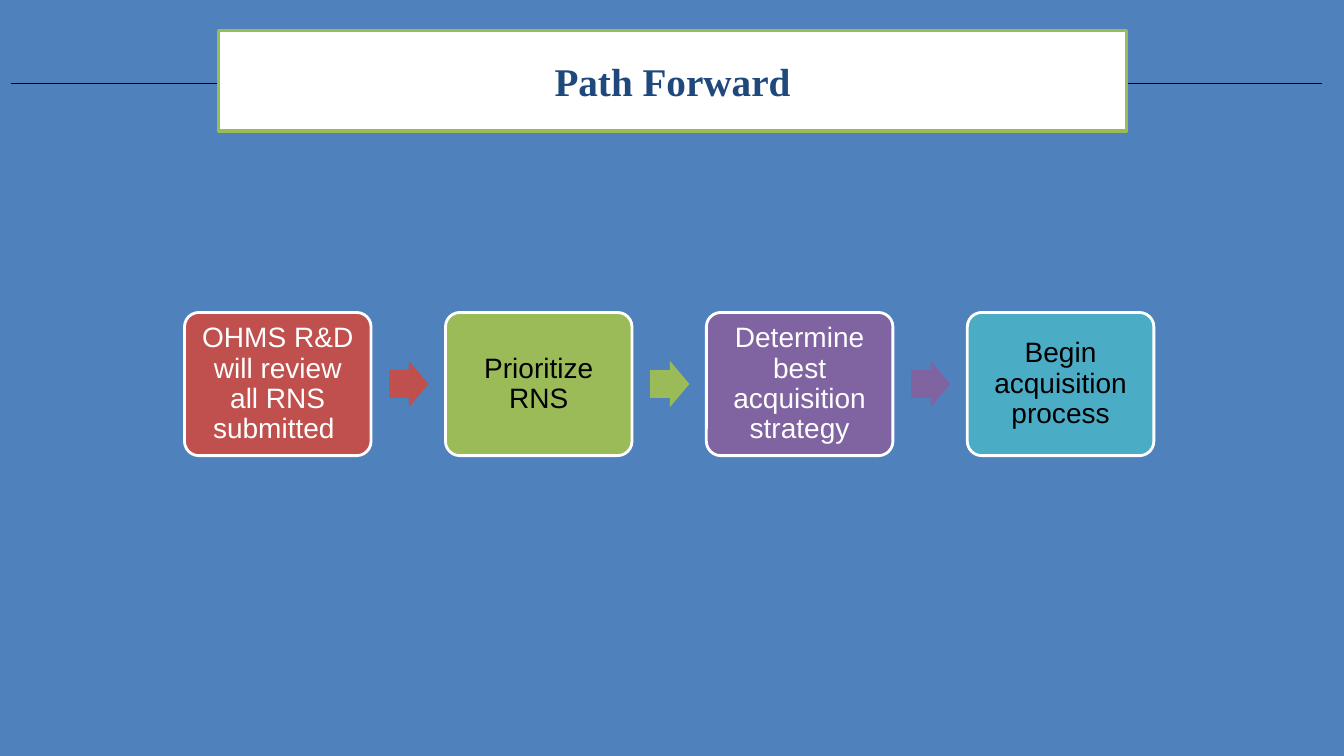
from dataclasses import dataclass

from lxml.etree import SubElement
from pptx import Presentation
from pptx.dml.color import RGBColor
from pptx.enum.shapes import MSO_CONNECTOR, MSO_SHAPE
from pptx.enum.text import MSO_ANCHOR, PP_ALIGN
from pptx.oxml.ns import qn
from pptx.shapes.autoshape import Shape
from pptx.slide import Slide
from pptx.util import Inches, Pt

COLOURS: dict[str, str] = {
    "background": "4F81BD",
    "white": "FFFFFF",
    "black": "000000",
    "navy": "1F497D",
    "red": "C0504D",
    "green": "9BBB59",
    "purple": "8064A2",
    "aqua": "4BACC6",
}

# Grid of the process row, in inches
SLIDE_WIDTH, SLIDE_HEIGHT = 13.33, 7.5
FIRST_COLUMN, COLUMN_STEP = 1.83, 2.588
STEP_WIDTH, STEP_HEIGHT = 1.85, 1.42
ROW_MIDDLE = 3.81
ARROW_OFFSET, ARROW_WIDTH, ARROW_HEIGHT = 2.03, 0.39, 0.46


@dataclass(frozen=True)
class Box:
    left: float
    top: float
    width: float
    height: float


@dataclass(frozen=True)
class Step:
    text: str
    fill: str
    text_colour: str


STEPS = [
    Step("OHMS R&D will review all RNS submitted ", "red", "white"),
    Step("Prioritize RNS", "green", "black"),
    Step("Determine best acquisition strategy", "purple", "white"),
    Step("Begin acquisition process", "aqua", "black"),
]


def colour(name: str) -> RGBColor:
    return RGBColor.from_string(COLOURS[name])


def add_filled_shape(slide: Slide, kind: MSO_SHAPE, box: Box, fill: str,
                     line: str | None = None, line_width: float = 0) -> Shape:
    shape = slide.shapes.add_shape(
        kind, Inches(box.left), Inches(box.top), Inches(box.width), Inches(box.height))
    shape.shadow.inherit = False
    shape.fill.solid()
    shape.fill.fore_color.rgb = colour(fill)
    if line is None:
        shape.line.fill.background()
    else:
        shape.line.color.rgb = colour(line)
        shape.line.width = Pt(line_width)
    return shape


def write_text(shape: Shape, text: str, font: str, size: float, text_colour: str,
               bold: bool = False, line_spacing: float = 1.0) -> None:
    frame = shape.text_frame
    frame.word_wrap = True
    frame.vertical_anchor = MSO_ANCHOR.MIDDLE
    paragraph = frame.paragraphs[0]
    paragraph.alignment = PP_ALIGN.CENTER
    paragraph.line_spacing = line_spacing
    run = paragraph.add_run()
    run.text = text
    run.font.name = font
    run.font.size = Pt(size)
    run.font.bold = bold
    run.font.color.rgb = colour(text_colour)


def add_title(slide: Slide) -> None:
    # Rule behind the title box
    rule = slide.shapes.add_connector(
        MSO_CONNECTOR.STRAIGHT, Inches(0.11), Inches(0.83), Inches(13.11), Inches(0.83))
    rule.line.color.rgb = colour("black")
    rule.line.width = Pt(0.75)
    SubElement(rule._element.spPr, qn("a:effectLst"))

    title = add_filled_shape(
        slide, MSO_SHAPE.RECTANGLE, Box(2.17, 0.3, 9, 1), "white", "green", 2.25)
    write_text(title, "Path Forward", "Times New Roman", 28, "navy", bold=True)


def add_step(slide: Slide, column: int, step: Step) -> None:
    left = FIRST_COLUMN + column * COLUMN_STEP
    box = Box(left, ROW_MIDDLE - STEP_HEIGHT / 2, STEP_WIDTH, STEP_HEIGHT)
    shape = add_filled_shape(slide, MSO_SHAPE.ROUNDED_RECTANGLE, box, step.fill, "white", 2)
    shape.adjustments[0] = 0.1
    frame = shape.text_frame
    frame.margin_left = frame.margin_right = Inches(0.09)
    frame.margin_top = frame.margin_bottom = Inches(0.08)
    write_text(shape, step.text, "Arial", 20, step.text_colour, line_spacing=0.9)


def add_arrow(slide: Slide, column: int, fill: str) -> None:
    left = FIRST_COLUMN + column * COLUMN_STEP + ARROW_OFFSET
    box = Box(left, ROW_MIDDLE - ARROW_HEIGHT / 2, ARROW_WIDTH, ARROW_HEIGHT)
    arrow = add_filled_shape(slide, MSO_SHAPE.RIGHT_ARROW, box, fill)
    arrow.adjustments[0] = 0.6
    arrow.adjustments[1] = 0.5


def main() -> None:
    presentation = Presentation()
    presentation.slide_width = Inches(SLIDE_WIDTH)
    presentation.slide_height = Inches(SLIDE_HEIGHT)
    slide = presentation.slides.add_slide(presentation.slide_layouts[6])
    slide.background.fill.solid()
    slide.background.fill.fore_color.rgb = colour("background")

    add_title(slide)

    # Process row: each step but the last points to the next
    for column, step in enumerate(STEPS):
        add_step(slide, column, step)
        if column < len(STEPS) - 1:
            add_arrow(slide, column, step.fill)

    presentation.save("out.pptx")


if __name__ == "__main__":
    main()
